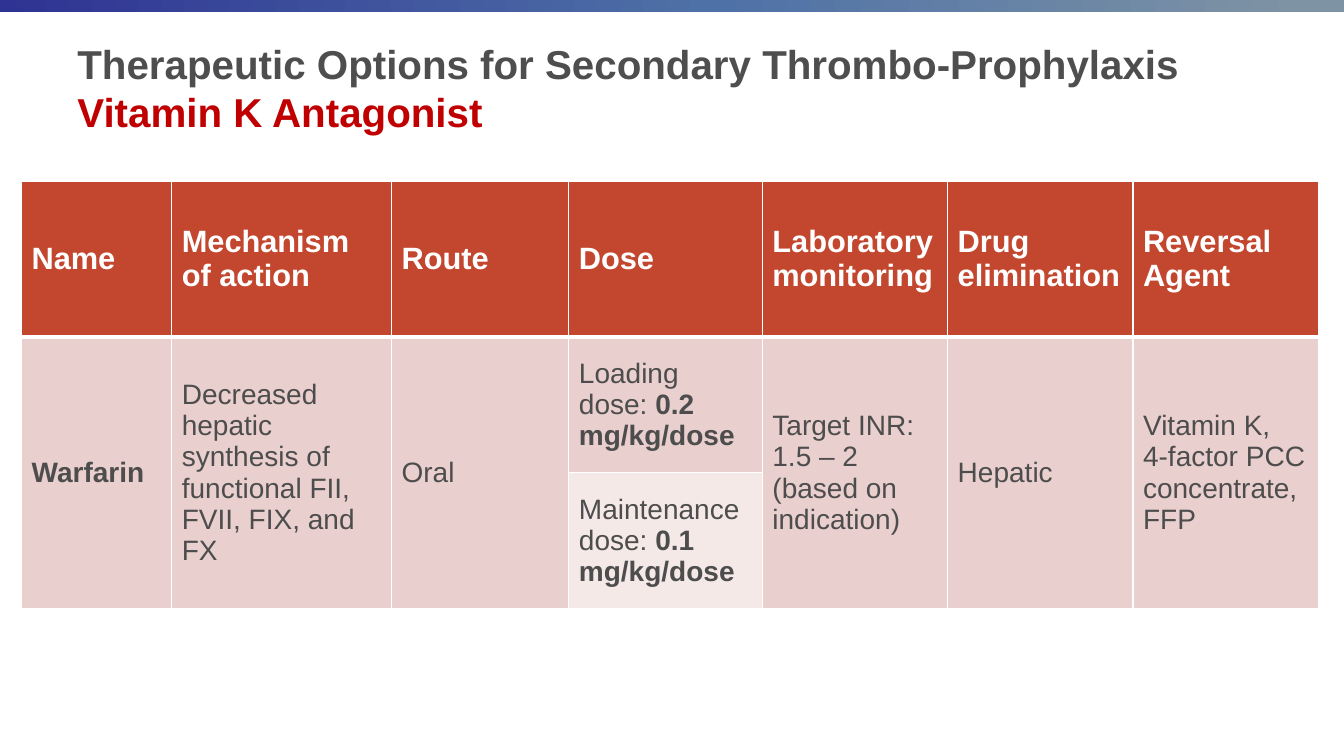
from copy import deepcopy

from lxml import etree
from pptx import Presentation
from pptx.dml.color import RGBColor
from pptx.enum import shapes, text
from pptx.oxml.ns import qn
from pptx.util import Pt

FONT = "Arial"
COLORS = {
    "title": "4D4E4D", "subtitle": "C00000", "body": "4D4D4D", "white": "FFFFFF",
    "header": "C3472E", "band": "E9CFCD", "light": "F5E9E8",
    "bar_start": "2F3393", "bar_middle": "4E71A7", "bar_end": "7E93A4",
}
BAR_STOPS = [(0, "bar_start"), (53, "bar_middle"), (97, "bar_end")]

COLUMN_WIDTHS = [107.3, 157, 126.7, 138.2, 132.4, 132.4, 132.4]
ROW_HEIGHTS = [110.9, 97.2, 97.2]
DOSE_COLUMN = 3
HEADERS = ["Name", "Mechanism of action", "Route", "Dose",
           "Laboratory monitoring", "Drug elimination", "Reversal Agent"]
# Each cell is a list of paragraphs, each paragraph a list of (text, bold) runs
WARFARIN = [
    [[("Warfarin", True)]],
    [[("Decreased hepatic synthesis of functional FII, FVII, FIX, and FX", False)]],
    [[("Oral", False)]],
    [[("Loading dose: ", False), ("0.2 mg/kg/dose", True)]],
    [[("Target INR: 1.5 – 2 (based on indication)", False)]],
    [[("Hepatic", False)]],
    [[("Vitamin K,", False)], [("4-factor PCC concentrate, FFP", False)]],
]
MAINTENANCE = [[("Maintenance dose: ", False), ("0.1 mg/kg/dose", True)]]


def rgb(name):
    return RGBColor.from_string(COLORS[name])


def add_top_bar(s, left, top, width, height):
    bar = s.shapes.add_shape(shapes.MSO_SHAPE.RECTANGLE,
                             Pt(left), Pt(top), Pt(width), Pt(height))
    bar.shadow.inherit = False
    bar.line.fill.background()
    bar.fill.gradient()
    bar.fill.gradient_angle = 0
    # The default gradient has two stops; add a third
    stop_list = bar._element.spPr.find(".//" + qn("a:gsLst"))
    stop_list.append(deepcopy(stop_list[-1]))
    for stop, (percent, color) in zip(bar.fill.gradient_stops, BAR_STOPS):
        stop.position = percent / 100
        stop.color.rgb = rgb(color)


def add_title(s, left, top, width, height):
    tf = s.shapes.add_textbox(Pt(left), Pt(top), Pt(width), Pt(height)).text_frame
    tf.word_wrap = True
    tf.vertical_anchor = text.MSO_ANCHOR.MIDDLE
    p = tf.paragraphs[0]
    p.font.name, p.font.size, p.font.bold = FONT, Pt(28.8), True
    r = p.add_run()
    r.text = "Therapeutic Options for Secondary Thrombo-Prophylaxis"
    r.font.color.rgb = rgb("title")
    p.add_line_break()
    r = p.add_run()
    r.text = "Vitamin K Antagonist"
    r.font.color.rgb = rgb("subtitle")


def style_cell(cell, fill, bottom=1):
    tc_pr = cell._tc.get_or_add_tcPr()
    for side, width in (("L", 1), ("R", 1), ("T", 1), ("B", bottom)):
        ln = etree.SubElement(tc_pr, qn("a:ln" + side), w=str(Pt(width)))
        solid = etree.SubElement(ln, qn("a:solidFill"))
        etree.SubElement(solid, qn("a:srgbClr"), val=COLORS["white"])
    cell.fill.solid()
    cell.fill.fore_color.rgb = rgb(fill)
    cell.vertical_anchor = text.MSO_ANCHOR.MIDDLE


def write_cell(cell, paragraphs, size, color):
    tf = cell.text_frame
    for i, runs in enumerate(paragraphs):
        p = tf.add_paragraph() if i else tf.paragraphs[0]
        p.font.name, p.font.size = FONT, Pt(size)
        p.font.color.rgb = rgb(color)
        for content, bold in runs:
            r = p.add_run()
            r.text = content
            r.font.bold = bold


def add_drug_table(s, left, top):
    table = s.shapes.add_table(
        len(ROW_HEIGHTS), len(COLUMN_WIDTHS), Pt(left), Pt(top),
        Pt(sum(COLUMN_WIDTHS)), Pt(sum(ROW_HEIGHTS))).table
    for row, height in zip(table.rows, ROW_HEIGHTS):
        row.height = Pt(height)
    for c, width in enumerate(COLUMN_WIDTHS):
        table.columns[c].width = Pt(width)
        header, upper, lower = (table.cell(r, c) for r in range(3))
        style_cell(header, "header", bottom=3)
        style_cell(upper, "band")
        style_cell(lower, "light" if c == DOSE_COLUMN else "band")
        write_cell(header, [[(HEADERS[c], True)]], 22, "white")
        write_cell(upper, WARFARIN[c], 20, "body")
        # Only the dose is split over two rows
        if c == DOSE_COLUMN:
            write_cell(lower, MAINTENANCE, 20, "body")
        else:
            upper.merge(lower)


def main():
    prs = Presentation()
    prs.slide_width, prs.slide_height = Pt(960), Pt(540)
    s = prs.slides.add_slide(prs.slide_layouts[6])
    add_top_bar(s, 0, 0, 960, 8.6)
    add_title(s, 48.2, 15.8, 846, 93.6)
    add_drug_table(s, 15.4, 129.6)
    prs.save("out.pptx")


if __name__ == "__main__":
    main()
